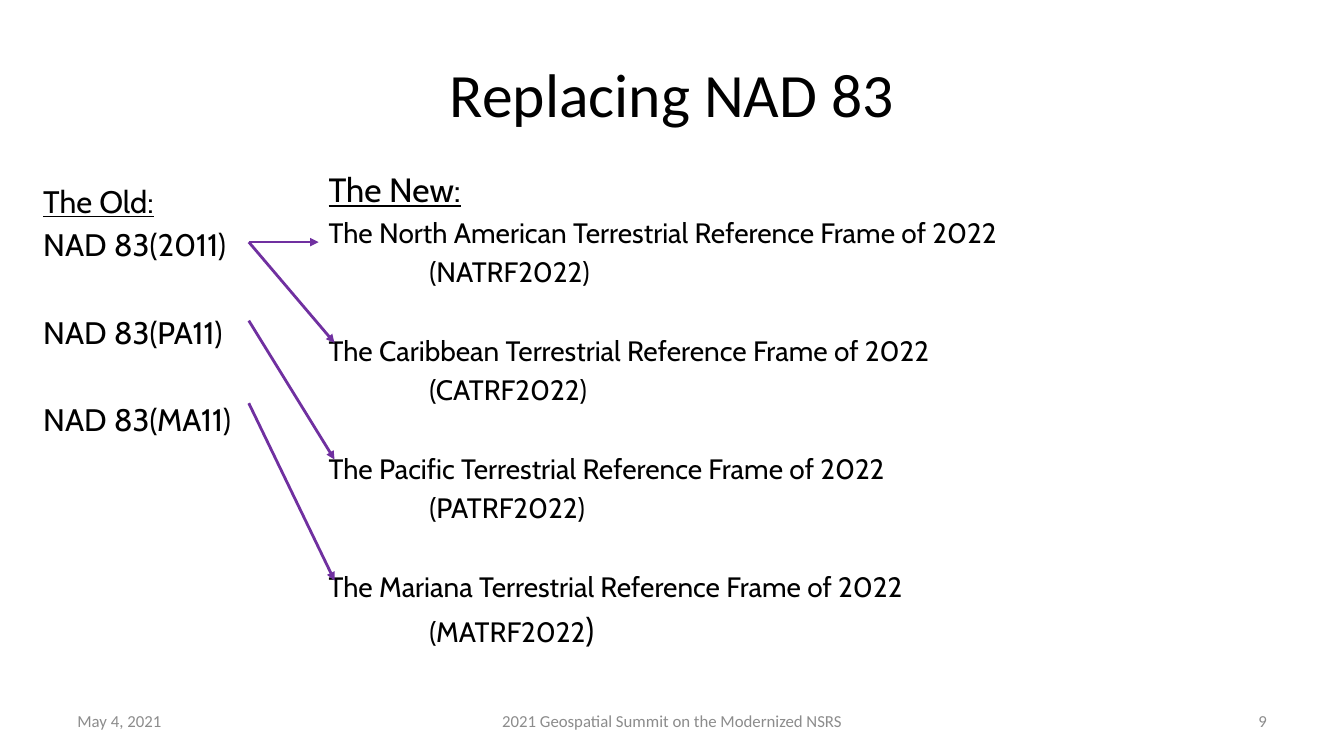
from dataclasses import dataclass

from lxml.etree import SubElement
from pptx import Presentation
from pptx.dml.color import RGBColor
from pptx.enum.shapes import MSO_CONNECTOR as Connector
from pptx.enum.text import MSO_ANCHOR as Anchor, PP_ALIGN as Align
from pptx.oxml.ns import qn
from pptx.util import Cm, Pt


@dataclass(frozen=True)
class Theme:
    ink: RGBColor = RGBColor(0x00, 0x00, 0x00)
    muted: RGBColor = RGBColor(0x8C, 0x8C, 0x8C)
    arrow: RGBColor = RGBColor(0x70, 0x30, 0xA0)
    heading_font: str = "Calibri"
    body_font: str = "Cabin"
    title_size: float = 44
    new_heading_size: float = 24
    old_size: float = 22.2
    frame_size: float = 20
    footer_size: float = 12
    arrow_width: float = 2
    line_height: float = 1.215
    space_before: float = 0.2

    def gap(self, size, skipped_lines=0):
        """Points before a line, leaving room for whole lines skipped above it."""
        spacing = self.space_before + skipped_lines * (self.line_height + self.space_before)
        return Pt(round(size * spacing, 1))


class SlideBuilder:
    def __init__(self, slide, theme):
        self.slide = slide
        self.theme = theme

    def text_frame(self, left, top, width, height, anchor=Anchor.TOP):
        box = self.slide.shapes.add_textbox(Cm(left), Cm(top), Cm(width), Cm(height))
        frame = box.text_frame
        frame.word_wrap = True
        frame.vertical_anchor = anchor
        return frame

    def style(self, paragraph, font_name, size, color):
        font = paragraph.font
        font.name = font_name
        font.size = Pt(size)
        font.color.rgb = color

    def label(self, text, area, size, color, align):
        frame = self.text_frame(*area, anchor=Anchor.MIDDLE)
        line = frame.paragraphs[0]
        line.text = text
        line.alignment = align
        self.style(line, self.theme.heading_font, size, color)

    def column(self, heading, area, size):
        frame = self.text_frame(*area)
        line = frame.paragraphs[0]
        line.text = heading
        self.style(line, self.theme.body_font, size, self.theme.ink)
        line.font.underline = True
        return frame

    def entry(self, frame, text, size, skipped_lines=0, indent=0):
        line = frame.add_paragraph()
        line.text = text
        line.space_before = self.theme.gap(size, skipped_lines)
        if indent:
            line._p.get_or_add_pPr().set("marL", str(Cm(indent)))
        self.style(line, self.theme.body_font, size, self.theme.ink)
        return line

    def arrow(self, start, end):
        line = self.slide.shapes.add_connector(
            Connector.STRAIGHT, *(Cm(value) for value in (*start, *end)))
        line.line.color.rgb = self.theme.arrow
        line.line.width = Pt(self.theme.arrow_width)
        SubElement(line.line._get_or_add_ln(), qn("a:tailEnd"), type="triangle")
        SubElement(line._element.spPr, qn("a:effectLst"))


OLD_DATUMS = ["NAD 83(2011)", "NAD 83(PA11)", "NAD 83(MA11)"]
NEW_FRAMES = [
    ("North American", "(NATRF2022)"),
    ("Caribbean", "(CATRF2022)"),
    ("Pacific", "(PATRF2022)"),
    ("Mariana", "(MATRF2022"),
]
ARROW_START = 6.27
ARROWS = [(6.1, 8.03, 6.1), (6.1, 8.43, 8.64), (8.08, 8.43, 11.58), (10.16, 8.43, 14.63)]
FOOTERS = [
    ("May 4, 2021", 1.7, 7.9, Align.LEFT),
    ("2021 Geospatial Summit on the Modernized NSRS", 11.58, 10.72, Align.CENTER),
    ("9", 24.28, 7.9, Align.RIGHT),
]


def main():
    theme = Theme()
    deck = Presentation()
    deck.slide_width, deck.slide_height = Cm(33.87), Cm(19.05)
    builder = SlideBuilder(deck.slides.add_slide(deck.slide_layouts[6]), theme)

    builder.label("Replacing NAD 83", (1.7, 0.76, 30.48, 3.18),
                  theme.title_size, theme.ink, Align.CENTER)

    old = builder.column("The Old:", (0.84, 4.47, 7.59, 6.55), theme.old_size)
    for index, datum in enumerate(OLD_DATUMS):
        builder.entry(old, datum, theme.old_size, skipped_lines=min(index, 1))

    new = builder.column("The New:", (8.03, 4.14, 17.58, 13.34), theme.new_heading_size)
    for index, (region, acronym) in enumerate(NEW_FRAMES):
        builder.entry(new, f"The {region} Terrestrial Reference Frame of 2022",
                      theme.frame_size, skipped_lines=min(index, 1))
        last_acronym = builder.entry(new, acronym, theme.frame_size, indent=2.54)
    closing = last_acronym.add_run()
    closing.text = ")"
    closing.font.size = Pt(theme.new_heading_size)

    for start_y, end_x, end_y in ARROWS:
        builder.arrow((ARROW_START, start_y), (end_x, end_y))

    for text, left, width, align in FOOTERS:
        builder.label(text, (left, 17.65, width, 1.02), theme.footer_size, theme.muted, align)

    deck.save("out.pptx")


if __name__ == "__main__":
    main()
